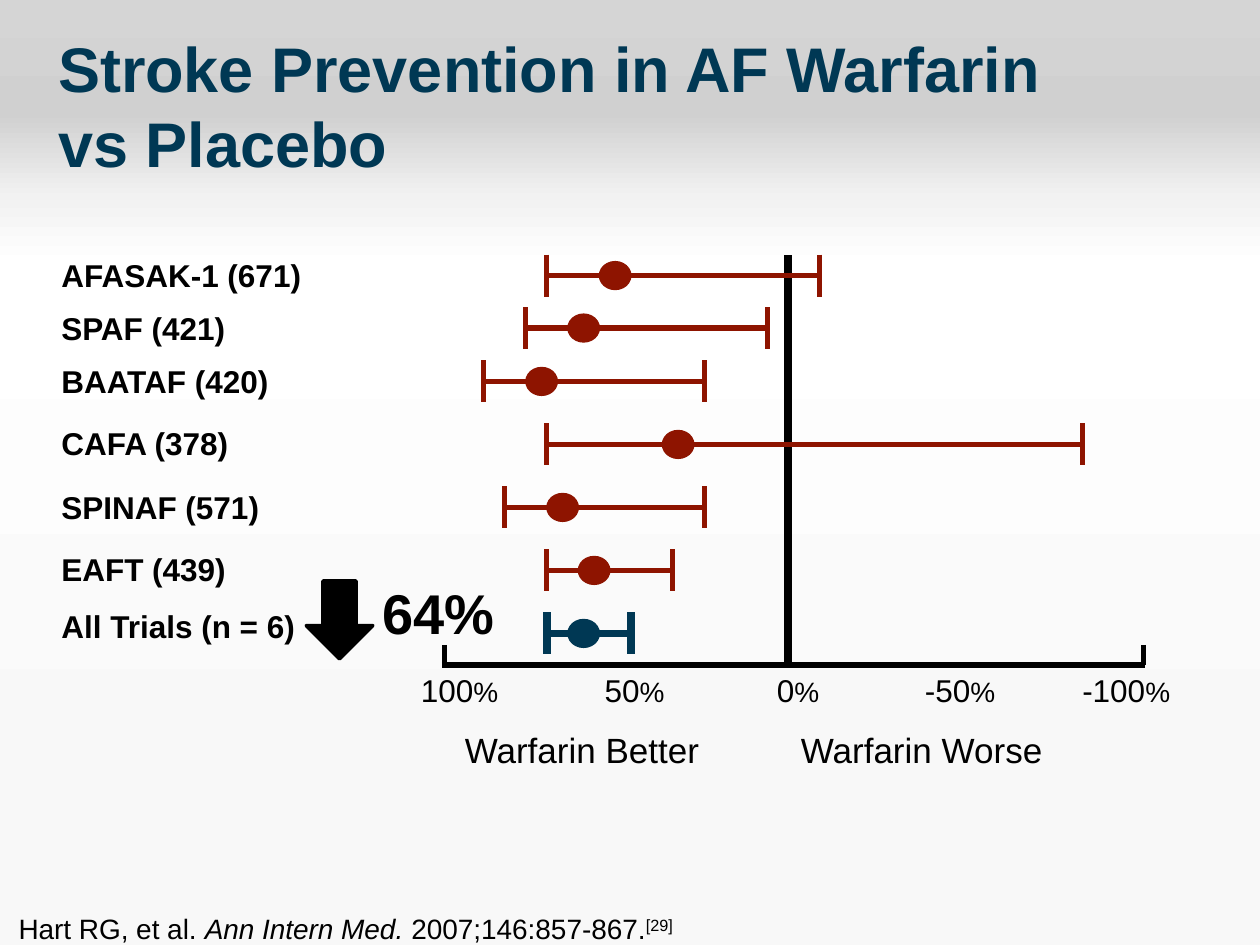
from typing import NamedTuple

from lxml import etree
from pptx import Presentation
from pptx.dml.color import RGBColor
from pptx.enum import shapes, text
from pptx.oxml import ns
from pptx.util import Pt

BLACK = RGBColor(0x00, 0x00, 0x00)
RED = RGBColor(0x8E, 0x14, 0x00)
NAVY = RGBColor(0x00, 0x38, 0x54)
BACKGROUND_STOPS = [(0, RGBColor(0xD5, 0xD5, 0xD5)), (12, RGBColor(0xD0, 0xD0, 0xD0)),
                    (21, RGBColor(0xF2, 0xF2, 0xF2)), (28, RGBColor(0xFF, 0xFF, 0xFF)),
                    (85, RGBColor(0xF8, 0xF8, 0xF8))]
FONT = "Arial"
CAP = 12
DOT_W, DOT_H = 18, 16
AXIS_Y, ZERO_X = 380, 450.5


class Trial(NamedTuple):
    label: str
    label_top: float
    y: float
    low: float
    mean: float
    high: float
    color: RGBColor = RED
    weight: float = 3


class Label(NamedTuple):
    words: str
    left: float
    top: float
    width: float
    height: float
    size: float
    bold: bool = False
    wrap: bool = False


TRIALS = [
    Trial("AFASAK-1 (671)", 142.5, 157.5, 312.5, 351.5, 468.5),
    Trial("SPAF (421)", 173, 187.5, 300.5, 333.5, 438.5),
    Trial("BAATAF (420)", 203.5, 218, 276.5, 309.5, 402.5),
    Trial("CAFA (378)", 239, 254, 312.5, 387.5, 618.5),
    Trial("SPINAF (571)", 275.5, 290, 288.5, 321.5, 402.5),
    Trial("EAFT (439)", 311, 326, 312.5, 339.5, 384.5),
    Trial("All Trials (n = 6)", 343.5, 362, 312.5, 333.5, 360.5, NAVY, 4.5),
]
LABELS = [
    Label("Warfarin Better", 258.5, 412.5, 192, 31, 20, wrap=True),
    Label("Warfarin Worse", ZERO_X, 412.5, 204, 31, 20, wrap=True),
    Label("64%", 211.5, 327, 88.5, 46, 32, bold=True, wrap=True),
]
TICKS = [("100", 27), ("50", 127), ("0", 220.5), ("-50", 313), ("-100", 408)]


def add_line(s, x1: float, y1: float, x2: float, y2: float, color: RGBColor, weight: float):
    line = s.shapes.add_connector(shapes.MSO_CONNECTOR.STRAIGHT, Pt(x1), Pt(y1), Pt(x2), Pt(y2))
    line.line.color.rgb = color
    line.line.width = Pt(weight)
    etree.SubElement(line.element.spPr, ns.qn("a:effectLst"))


def add_solid(s, kind, left: float, top: float, width: float, height: float,
              color: RGBColor, weight: float):
    sp = s.shapes.add_shape(kind, Pt(left), Pt(top), Pt(width), Pt(height))
    sp.shadow.inherit = False
    sp.fill.solid()
    sp.fill.fore_color.rgb = color
    sp.line.color.rgb = color
    sp.line.width = Pt(weight)


def add_run(p, words: str, size: float, color: RGBColor = BLACK, bold: bool = False):
    r = p.add_run()
    r.text = words
    r.font.name, r.font.size, r.font.bold = FONT, Pt(size), bold
    r.font.color.rgb = color
    return r


def add_box(s, left: float, top: float, width: float, height: float, wrap: bool = False):
    tf = s.shapes.add_textbox(Pt(left), Pt(top), Pt(width), Pt(height)).text_frame
    tf.word_wrap = wrap
    tf.auto_size = text.MSO_AUTO_SIZE.SHAPE_TO_FIT_TEXT
    return tf.paragraphs[0]


def add_label(s, label: Label):
    p = add_box(s, label.left, label.top, label.width, label.height, label.wrap)
    add_run(p, label.words, label.size, bold=label.bold)


def add_trial(s, trial: Trial):
    add_line(s, trial.low, trial.y, trial.high, trial.y, trial.color, trial.weight)
    for x in (trial.low, trial.high):
        add_line(s, x, trial.y - CAP, x, trial.y + CAP, trial.color, trial.weight)
    add_solid(s, shapes.MSO_SHAPE.OVAL, trial.mean - DOT_W / 2, trial.y - DOT_H / 2,
              DOT_W, DOT_H, trial.color, 0.75)
    add_label(s, Label(trial.label, 28, trial.label_top, 158, 29, 18, bold=True))


def add_axis(s):
    add_line(s, 252.5, AXIS_Y, 654.5, AXIS_Y, BLACK, 3)
    add_line(s, ZERO_X, AXIS_Y, ZERO_X, 146, BLACK, 4.5)
    for x in (254, 653.5):
        add_line(s, x, 368.5, x, AXIS_Y, BLACK, 3)
    p = add_box(s, 228.5, AXIS_Y, 452, 29, True)
    tabs = etree.SubElement(p._p.get_or_add_pPr(), ns.qn("a:tabLst"))
    for value, position in TICKS:
        etree.SubElement(tabs, ns.qn("a:tab"), pos=str(Pt(position)), algn="ctr")
        add_run(p, "\t" + value, 18)
        add_run(p, "%", 16)


def paint_background(s):
    fill = s.background.fill
    fill.gradient()
    fill.gradient_angle = 270
    stops = next(s.element.iter(ns.qn("a:gsLst")))
    for stop in list(stops):
        stops.remove(stop)
    for percent, color in BACKGROUND_STOPS:
        stop = etree.SubElement(stops, ns.qn("a:gs"), pos=str(percent * 1000))
        etree.SubElement(stop, ns.qn("a:srgbClr"), val=str(color))


def add_title(s):
    title = s.shapes.title
    title.left, title.top, title.width, title.height = Pt(26), Pt(13), Pt(619), Pt(90)
    tf = title.text_frame
    tf.text = "Stroke Prevention in AF Warfarin vs Placebo"
    tf.word_wrap = True
    tf.auto_size = text.MSO_AUTO_SIZE.NONE
    tf.vertical_anchor = text.MSO_ANCHOR.BOTTOM
    tf.margin_bottom = 0
    p = tf.paragraphs[0]
    p.alignment = text.PP_ALIGN.LEFT
    font = p.runs[0].font
    font.name, font.size, font.bold = FONT, Pt(36), True
    font.color.rgb = NAVY
    effects = etree.Element(ns.qn("a:effectLst"))
    shadow = etree.SubElement(effects, ns.qn("a:outerShdw"), dist=str(Pt(2)), dir="2700000")
    etree.SubElement(shadow, ns.qn("a:srgbClr"), val="C0C0C0")
    p.runs[0]._r.rPr.find(ns.qn("a:solidFill")).addnext(effects)


def add_citation(s):
    p = add_box(s, 3.5, 517.5, 395, 27)
    add_run(p, "Hart RG, et al. ", 16)
    add_run(p, "Ann Intern Med. ", 16).font.italic = True
    add_run(p, "2007;146:857-867.", 16)
    add_run(p, "[29]", 16)._r.rPr.set("baseline", "30000")


def main():
    prs = Presentation()
    prs.slide_width, prs.slide_height = Pt(720), Pt(540)
    s = prs.slides.add_slide(prs.slide_layouts[5])
    paint_background(s)
    add_title(s)
    add_axis(s)
    for trial in TRIALS:
        add_trial(s, trial)
    for label in LABELS:
        add_label(s, label)
    add_solid(s, shapes.MSO_SHAPE.DOWN_ARROW, 175, 332, 38, 44.5, BLACK, 2)
    add_citation(s)
    prs.save("out.pptx")


if __name__ == "__main__":
    main()
